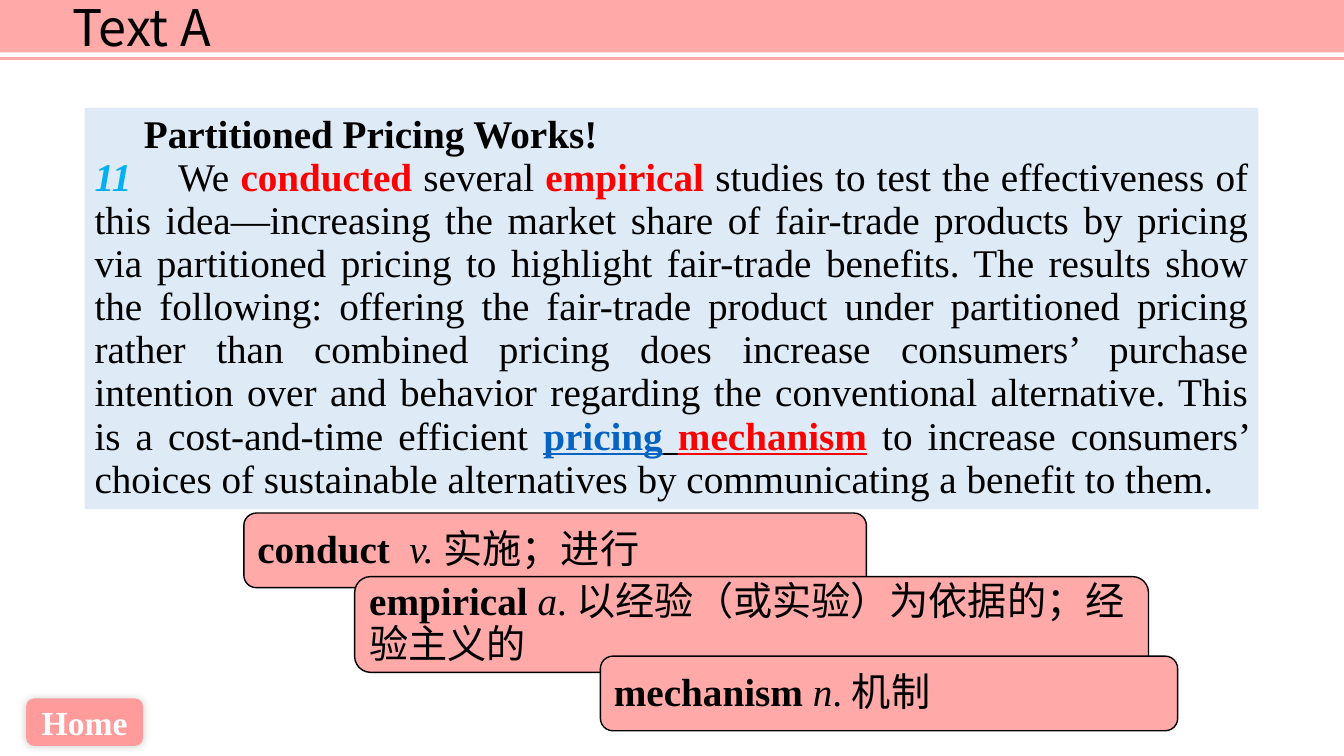
import pptx
import pptx.dml.color
import pptx.enum.shapes
import pptx.enum.text
import pptx.oxml
import pptx.oxml.ns
import pptx.util
from pptx.util import Inches

SHAPES = pptx.enum.shapes.MSO_SHAPE
ALIGN = pptx.enum.text.PP_ALIGN
MIDDLE = pptx.enum.text.MSO_ANCHOR.MIDDLE
CJK_FONT = "Noto Sans CJK SC"
SERIF_FONT = "Times New Roman"
PINK = "FFA9A9"
BLACK = "000000"
RED = "FF0000"
WIDTH = 13.34

BOLD = {"bold": True}
KEYWORD = {"bold": True, "color": RED}
PASSAGE = [
    ("11\t", {"bold": True, "italic": True, "color": "00B0F0"}),
    ("We ", {}),
    ("conducted ", KEYWORD),
    ("several ", {}),
    ("empirical ", KEYWORD),
    ("studies to test the effectiveness of this idea—increasing the market share of "
     "fair-trade products by pricing via partitioned pricing to highlight fair-trade "
     "benefits. The results show the following: offering the fair-trade product under "
     "partitioned pricing rather than combined pricing does increase consumers’ purchase "
     "intention over and behavior regarding the conventional alternative. This is a "
     "cost-and-time efficient ", {}),
    ("pricing", {"bold": True, "underline": True, "color": "0563C1"}),
    (" ", {"bold": True, "underline": True}),
    ("mechanism", {"bold": True, "underline": True, "color": RED}),
    (" to increase consumers’ choices of sustainable alternatives by communicating "
     "a benefit to them.", {}),
]
GLOSSARY = [
    ((2.42, 5.09, 6.18, 0.74), "conduct  ", "v. ", "实施；进行"),
    ((3.52, 5.72, 7.88, 0.95), "empirical ", "a", ". 以经验（或实验）为依据的；经验主义的"),
    ((5.96, 6.51, 5.73, 0.74), "mechanism ", "n", ". 机制"),
]


def rgb(value):
    return pptx.dml.color.RGBColor.from_string(value)


def add_xml(parent, xml):
    namespace = pptx.oxml.ns.nsdecls("a")
    parent.append(pptx.oxml.parse_xml(xml.replace(" ", f" {namespace} ", 1)))


def add_box(slide, kind, box, fill, line=None):
    shape = slide.shapes.add_shape(kind, *map(Inches, box))
    shape.shadow.inherit = False
    shape.fill.solid()
    shape.fill.fore_color.rgb = rgb(fill)
    if line:
        shape.line.color.rgb = rgb(line)
        shape.line.width = pptx.util.Pt(1)
    else:
        shape.line.fill.background()
    shape.text_frame.word_wrap = True
    return shape


def format_run(run, size=28, name=SERIF_FONT, color=BLACK,
               bold=False, italic=False, underline=False):
    font = run.font
    font.size = pptx.util.Pt(size)
    font.name = name
    font.color.rgb = rgb(color)
    font.bold, font.italic, font.underline = bold, italic, underline
    add_xml(font._element, f'<a:ea typeface="{CJK_FONT}"/>')


def write_runs(paragraph, runs, align=ALIGN.LEFT, spacing=None):
    paragraph.alignment = align
    paragraph.line_spacing = spacing
    for text, style in runs:
        run = paragraph.add_run()
        run.text = text
        format_run(run, **style)


def add_header(slide):
    add_box(slide, SHAPES.RECTANGLE, (0, 0, WIDTH, 0.52), PINK)
    rule = slide.shapes.add_connector(
        pptx.enum.shapes.MSO_CONNECTOR.STRAIGHT,
        Inches(0), Inches(0.58), Inches(WIDTH), Inches(0.58))
    rule.line.color.rgb = rgb(PINK)
    rule.line.width = pptx.util.Pt(2)
    add_xml(rule._element.spPr, "<a:effectLst />")
    title = slide.shapes.add_textbox(*map(Inches, (0.62, -0.09, 2.27, 0.71)))
    title.text_frame.word_wrap = True
    title.text_frame.text = "Text A"
    format_run(title.text_frame.paragraphs[0].runs[0], size=36, name=CJK_FONT)


def add_home_button(slide):
    button = add_box(slide, SHAPES.ROUNDED_RECTANGLE, (0.26, 6.93, 1.16, 0.47), "FF9B9B")
    effects = button._element.spPr.find(pptx.oxml.ns.qn("a:effectLst"))
    add_xml(effects, '<a:outerShdw blurRad="76200" dist="0" dir="18900000">'
                     '<a:srgbClr val="000000"><a:alpha val="20000"/></a:srgbClr>'
                     '</a:outerShdw>')
    frame = button.text_frame
    frame.vertical_anchor = MIDDLE
    write_runs(frame.paragraphs[0],
               [("Home", {"size": 24, "bold": True, "color": "FFFFFF"})], ALIGN.CENTER)


def add_passage(slide):
    frame = add_box(slide, SHAPES.RECTANGLE, (0.84, 1.07, 11.65, 3.98), "DEEBF7").text_frame
    frame.vertical_anchor = pptx.enum.text.MSO_ANCHOR.TOP
    spacing = pptx.util.Pt(30.8)
    heading = frame.paragraphs[0]
    write_runs(heading, [("Partitioned Pricing Works!", BOLD)], ALIGN.JUSTIFY, spacing)
    heading._p.get_or_add_pPr().set("indent", str(Inches(0.49)))
    body = frame.add_paragraph()
    write_runs(body, PASSAGE, ALIGN.JUSTIFY, spacing)
    add_xml(body._p.get_or_add_pPr(),
            f'<a:tabLst ><a:tab pos="{Inches(0.83)}" algn="l"/></a:tabLst>')


def add_glossary_card(slide, box, word, part_of_speech, meaning):
    card = add_box(slide, SHAPES.ROUNDED_RECTANGLE, box, PINK, BLACK)
    card.text_frame.vertical_anchor = MIDDLE
    runs = [(word, BOLD), (part_of_speech, {"italic": True}), (meaning, {})]
    write_runs(card.text_frame.paragraphs[0], runs, spacing=0.9)


def main():
    presentation = pptx.Presentation()
    presentation.slide_width = Inches(WIDTH)
    presentation.slide_height = Inches(7.5)
    slide = presentation.slides.add_slide(presentation.slide_layouts[6])
    add_header(slide)
    add_home_button(slide)
    add_passage(slide)
    for entry in GLOSSARY:
        add_glossary_card(slide, *entry)
    presentation.save("out.pptx")


if __name__ == "__main__":
    main()
